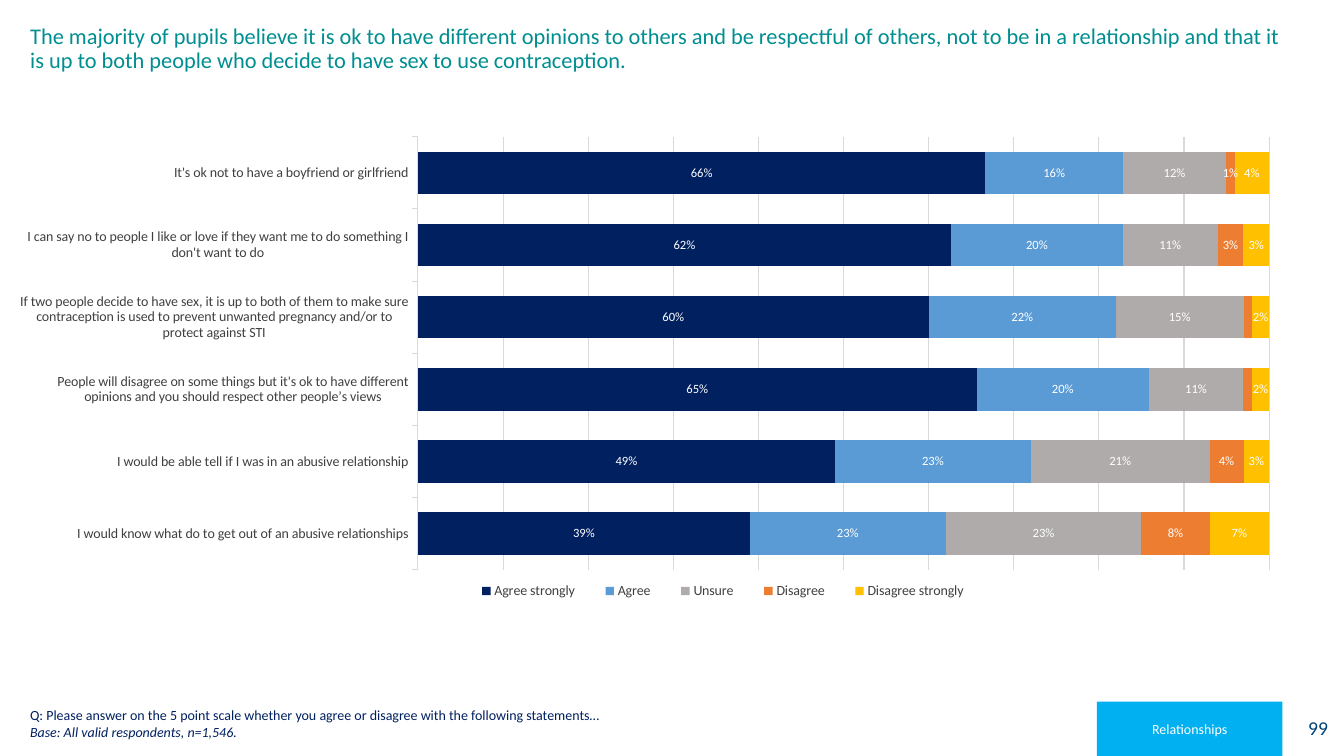
from pptx import Presentation
from pptx.chart.data import CategoryChartData
from pptx.dml.color import RGBColor
from pptx.enum.chart import XL_CHART_TYPE, XL_LEGEND_POSITION, XL_TICK_LABEL_POSITION, XL_TICK_MARK
from pptx.enum.shapes import MSO_SHAPE
from pptx.enum.text import MSO_ANCHOR, PP_ALIGN
from pptx.oxml import parse_xml
from pptx.oxml.ns import nsdecls
from pptx.util import Emu, Pt

PX = 9144  # 100 px to the inch
FONT = "Calibri"
WHITE = RGBColor(0xFF, 0xFF, 0xFF)
TEAL = RGBColor(0x00, 0x8E, 0x91)
NAVY = RGBColor(0x00, 0x20, 0x60)
PAGE_BLUE = RGBColor(0x00, 0x43, 0x76)
TAG_BLUE = RGBColor(0x00, 0xB0, 0xF0)
DARK_GREY = RGBColor(0x40, 0x40, 0x40)
GRID_GREY = RGBColor(0xD9, 0xD9, 0xD9)
SKY = RGBColor(0x5B, 0x9B, 0xD5)
GREY = RGBColor(0xAF, 0xAB, 0xAB)
ORANGE = RGBColor(0xED, 0x7D, 0x31)
YELLOW = RGBColor(0xFF, 0xC0, 0x00)

TITLE = ("The majority of pupils believe it is ok to have different opinions to others and be "
         "respectful of others, not to be in a relationship and that it is up to both people "
         "who decide to have sex to use contraception.")
QUESTION = "Q: Please answer on the 5 point scale whether you agree or disagree with the following statements…"
BASE = "Base: All valid respondents, n=1,546."

STATEMENTS = [
    "I would know what do to get out of an abusive relationships",
    "I would be able tell if I was in an abusive relationship",
    "People will disagree on some things but it's ok to have different opinions and you "
    "should respect other people’s views",
    "If two people decide to have sex, it is up to both of them to make sure contraception "
    "is used to prevent unwanted pregnancy and/or to protect against STI",
    "I can say no to people I like or love if they want me to do something I don't want to do",
    "It's ok not to have a boyfriend or girlfriend",
]
# Answer, colour, shares per statement, statements whose label is hidden
ANSWERS = [
    ("Agree strongly", NAVY, (0.39, 0.49, 0.65, 0.60, 0.62, 0.66), ()),
    ("Agree", SKY, (0.23, 0.23, 0.20, 0.22, 0.20, 0.16), ()),
    ("Unsure", GREY, (0.23, 0.21, 0.11, 0.15, 0.11, 0.12), ()),
    ("Disagree", ORANGE, (0.08, 0.04, 0.01, 0.01, 0.03, 0.01), (2, 3)),
    ("Disagree strongly", YELLOW, (0.07, 0.03, 0.02, 0.02, 0.03, 0.04), ()),
]


def px(*lengths):
    return [Emu(length * PX) for length in lengths]


def style_font(font, size, color):
    font.name, font.size = FONT, Pt(size)
    font.color.rgb = color


def style_line(line):
    line.color.rgb = GRID_GREY
    line.width = Pt(0.75)


def add_title(page, box):
    title = page.shapes.title
    title.left, title.top, title.width, title.height = px(*box)
    frame = title.text_frame
    frame.text = TITLE
    frame.vertical_anchor = MSO_ANCHOR.TOP
    para = frame.paragraphs[0]
    para.alignment = PP_ALIGN.LEFT
    para.line_spacing = 0.9
    style_font(para.runs[0].font, 16, TEAL)


def set_layout(parent, index, left, top, width, height, target=""):
    """Fix the place of a chart part, in fractions of the chart."""
    for old in parent.xpath("c:layout"):
        parent.remove(old)
    parent.insert(index, parse_xml(
        f'<c:layout {nsdecls("c")}><c:manualLayout>{target}'
        '<c:xMode val="edge"/><c:yMode val="edge"/>'
        f'<c:x val="{left}"/><c:y val="{top}"/><c:w val="{width}"/><c:h val="{height}"/>'
        '</c:manualLayout></c:layout>'))


def add_answer_chart(page, box):
    data = CategoryChartData(number_format="0%")
    data.categories = STATEMENTS
    for name, _, shares, _ in ANSWERS:
        data.add_series(name, shares)
    chart = page.shapes.add_chart(XL_CHART_TYPE.BAR_STACKED_100, *px(*box), data).chart
    chart.has_title = False
    style_font(chart.font, 10, DARK_GREY)

    # Axes and grid
    statements = chart.category_axis
    statements.major_tick_mark = XL_TICK_MARK.OUTSIDE
    statements.tick_label_position = XL_TICK_LABEL_POSITION.LOW
    style_font(statements.tick_labels.font, 10, DARK_GREY)
    style_line(statements.format.line)
    shares = chart.value_axis
    shares.visible = False
    shares.minimum_scale, shares.maximum_scale, shares.major_unit = 0, 1, 0.1
    shares.has_major_gridlines = True
    style_line(shares.major_gridlines.format.line)

    # Bars and their labels
    plot = chart.plots[0]
    plot.gap_width, plot.overlap = 70, 100
    plot.vary_by_categories = False
    for series, (_, color, _, hidden) in zip(plot.series, ANSWERS):
        series.format.fill.solid()
        series.format.fill.fore_color.rgb = color
        labels = series.data_labels
        labels.show_value = True
        labels.number_format, labels.number_format_is_linked = "0%", False
        style_font(labels.font, 9, WHITE)
        for position, point in enumerate(hidden):
            labels_xml = chart.element.xpath(f'.//c:ser[c:tx//c:v="{series.name}"]/c:dLbls')[0]
            labels_xml.insert(position, parse_xml(
                f'<c:dLbl {nsdecls("c")}><c:idx val="{point}"/><c:delete val="1"/></c:dLbl>'))

    # Legend and layout
    chart.has_legend = True
    chart.legend.position = XL_LEGEND_POSITION.BOTTOM
    chart.legend.include_in_layout = False
    style_font(chart.legend.font, 10, DARK_GREY)
    set_layout(chart.element.xpath(".//c:plotArea")[0], 0, 0.31, 0.07, 0.67, 0.82,
               '<c:layoutTarget val="inner"/>')
    set_layout(chart.element.xpath(".//c:legend")[0], 1, 0.34, 0.9, 0.42, 0.06)


def add_note(page, box):
    frame = page.shapes.add_textbox(*px(*box)).text_frame
    frame.word_wrap = True
    frame.text = f"{QUESTION}\n{BASE}"
    for para in frame.paragraphs:
        style_font(para.runs[0].font, 10, NAVY)
    frame.paragraphs[1].runs[0].font.italic = True


def add_label_box(page, box, text, fill, size, color, alignment):
    shape = page.shapes.add_shape(MSO_SHAPE.RECTANGLE, *px(*box))
    shape.shadow.inherit = False
    shape.fill.solid()
    shape.fill.fore_color.rgb = fill
    shape.line.fill.background()
    frame = shape.text_frame
    frame.text = text
    frame.vertical_anchor = MSO_ANCHOR.MIDDLE
    para = frame.paragraphs[0]
    para.alignment = alignment
    style_font(para.runs[0].font, size, color)


def main():
    deck = Presentation()
    deck.slide_width, deck.slide_height = px(1333, 750)
    page = deck.slides.add_slide(deck.slide_layouts[5])
    add_label_box(page, (1268, 695, 59, 54), "99", WHITE, 14, PAGE_BLUE, PP_ALIGN.RIGHT)
    add_title(page, (20, 20, 1277, 98))
    add_answer_chart(page, (20, 99, 1264, 524))
    add_note(page, (20, 696, 957, 44))
    add_label_box(page, (1088, 696, 184, 54), "Relationships", TAG_BLUE, 10, WHITE, PP_ALIGN.CENTER)
    deck.save("out.pptx")


if __name__ == "__main__":
    main()
